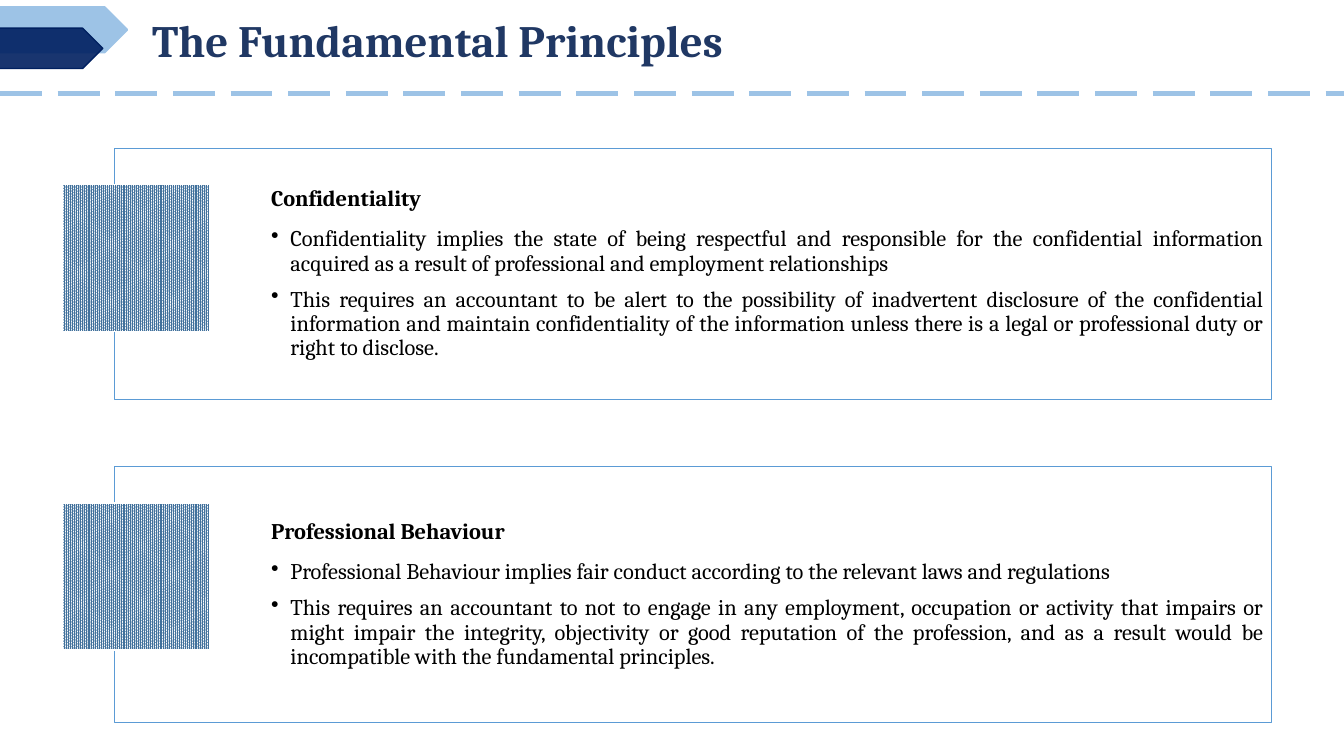
"""Build the slide on two fundamental principles: confidentiality and professional behaviour."""
from dataclasses import dataclass

from lxml import etree
from pptx import Presentation
from pptx.dml.color import RGBColor
from pptx.enum.dml import MSO_LINE, MSO_PATTERN
from pptx.enum.shapes import MSO_CONNECTOR, MSO_SHAPE
from pptx.enum.text import MSO_ANCHOR, PP_ALIGN
from pptx.oxml.ns import qn
from pptx.shapes.autoshape import Shape
from pptx.slide import Slide
from pptx.text.text import _Paragraph
from pptx.util import Inches, Pt

RECTANGLE = MSO_SHAPE.RECTANGLE
PENTAGON = MSO_SHAPE.PENTAGON
STRAIGHT = MSO_CONNECTOR.STRAIGHT
LONG_DASH = MSO_LINE.LONG_DASH
DENSE_DOTS = MSO_PATTERN.PERCENT_90
MIDDLE = MSO_ANCHOR.MIDDLE
JUSTIFY = PP_ALIGN.JUSTIFY

COLORS = {
    "sky": "9DC3E6",
    "navy": "002060",
    "title": "203864",
    "border": "5B9BD5",
    "tile": "41719C",
    "white": "FFFFFF",
    "black": "000000",
}
FONT = "Cambria"
SLIDE_WIDTH, SLIDE_HEIGHT = 13.33, 7.5
PANEL_LEFT, PANEL_WIDTH = 1.13, 11.48
TILE_LEFT, TILE_SIZE = 0.62, 1.46
TILE_DROP = 0.36
BULLET_INDENT = 0.19

TITLE_FONT = {"name": FONT, "size": Pt(32), "bold": True}
HEADING_FONT = {"name": FONT, "size": Pt(16), "bold": True}
POINT_FONT = {**HEADING_FONT, "bold": False}
HEADING_FORMAT = {
    "alignment": JUSTIFY,
    "line_spacing": 0.9,
    "space_before": Pt(6),
    "space_after": Pt(5.6),
}
POINT_FORMAT = {**HEADING_FORMAT, "level": 1, "space_after": Pt(2.4)}
PANEL_FRAME = {
    "word_wrap": True,
    "vertical_anchor": MIDDLE,
    "margin_left": Inches(1.56),
    "margin_top": Inches(0.07),
    "margin_right": Inches(0.07),
    "margin_bottom": Inches(0.07),
}


@dataclass(frozen=True)
class Box:
    left: float
    top: float
    width: float
    height: float


@dataclass(frozen=True)
class Arrow:
    box: Box
    color: str
    line_width: float
    opacity: int


@dataclass(frozen=True)
class Principle:
    top: float
    height: float
    heading: str
    points: tuple[str, ...]


ARROWS = (
    Arrow(Box(-0.03, 0.07, 1.29, 0.45), "sky", 1.5, 100),
    Arrow(Box(-0.03, 0.28, 1.05, 0.4), "navy", 1, 90),
)
PRINCIPLES = (
    Principle(1.47, 2.49, "Confidentiality", (
        "Confidentiality implies the state of being respectful and responsible for the "
        "confidential information acquired as a result of professional and employment "
        "relationships",
        "This requires an accountant to be alert to the possibility of inadvertent disclosure "
        "of the confidential information and maintain confidentiality of the information "
        "unless there is a legal or professional duty or right to disclose.",
    )),
    Principle(4.63, 2.54, "Professional Behaviour", (
        "Professional Behaviour implies fair conduct according to the relevant laws and "
        "regulations",
        "This requires an accountant to not to engage in any employment, occupation or "
        "activity that impairs or might impair the integrity, objectivity or good reputation "
        "of the profession, and as a result would be incompatible with the fundamental "
        "principles.",
    )),
)


def rgb(color: str) -> RGBColor:
    return RGBColor.from_string(COLORS[color])


def apply(target: object, values: dict[str, object]) -> None:
    for attribute, value in values.items():
        setattr(target, attribute, value)


def add_outlined(slide: Slide, kind: MSO_SHAPE, box: Box, line: str, width: float) -> Shape:
    shape = slide.shapes.add_shape(
        kind, Inches(box.left), Inches(box.top), Inches(box.width), Inches(box.height))
    shape.shadow.inherit = False
    shape.line.color.rgb = rgb(line)
    shape.line.width = Pt(width)
    return shape


def fill_solid(shape: Shape, color: str, opacity: int) -> None:
    shape.fill.solid()
    shape.fill.fore_color.rgb = rgb(color)
    if opacity < 100:
        shade = shape.fill._xPr.find(qn("a:solidFill")).find(qn("a:srgbClr"))
        etree.SubElement(shade, qn("a:alpha"), val=str(opacity * 1000))


def write(paragraph: _Paragraph, text: str, font: dict[str, object], color: str) -> None:
    run = paragraph.add_run()
    run.text = text
    apply(run.font, font)
    run.font.color.rgb = rgb(color)


def add_bullet(paragraph: _Paragraph) -> None:
    properties = paragraph._p.get_or_add_pPr()
    properties.set("marL", str(Inches(BULLET_INDENT)))
    properties.set("indent", str(-Inches(BULLET_INDENT)))
    etree.SubElement(properties, qn("a:buChar"), char="•")


def add_arrow(slide: Slide, arrow: Arrow) -> None:
    shape = add_outlined(slide, PENTAGON, arrow.box, arrow.color, arrow.line_width)
    fill_solid(shape, arrow.color, arrow.opacity)


def add_divider(slide: Slide) -> None:
    height = Inches(0.93)
    divider = slide.shapes.add_connector(STRAIGHT, 0, height, Inches(SLIDE_WIDTH), height)
    divider.line.color.rgb = rgb("sky")
    divider.line.width = Pt(3.75)
    divider.line.dash_style = LONG_DASH
    etree.SubElement(divider._element.spPr, qn("a:effectLst"))


def add_title(slide: Slide) -> None:
    title = slide.shapes.add_textbox(Inches(1.41), Inches(0.08), Inches(11.72), Inches(0.64))
    title.text_frame.word_wrap = True
    write(title.text_frame.paragraphs[0], "The Fundamental Principles", TITLE_FONT, "title")


def add_principle(slide: Slide, principle: Principle) -> None:
    panel_box = Box(PANEL_LEFT, principle.top, PANEL_WIDTH, principle.height)
    panel = add_outlined(slide, RECTANGLE, panel_box, "border", 0.5)
    fill_solid(panel, "white", 40)
    frame = panel.text_frame
    apply(frame, PANEL_FRAME)
    heading = frame.paragraphs[0]
    apply(heading, HEADING_FORMAT)
    write(heading, principle.heading, HEADING_FONT, "black")
    for text in principle.points:
        point = frame.add_paragraph()
        apply(point, POINT_FORMAT)
        add_bullet(point)
        write(point, text, POINT_FONT, "black")

    tile_box = Box(TILE_LEFT, principle.top + TILE_DROP, TILE_SIZE, TILE_SIZE)
    tile = add_outlined(slide, RECTANGLE, tile_box, "white", 1)
    tile.fill.patterned()
    tile.fill.pattern = DENSE_DOTS
    tile.fill.fore_color.rgb = rgb("tile")
    tile.fill.back_color.rgb = rgb("white")


def main() -> None:
    presentation = Presentation()
    presentation.slide_width = Inches(SLIDE_WIDTH)
    presentation.slide_height = Inches(SLIDE_HEIGHT)
    slide = presentation.slides.add_slide(presentation.slide_layouts[6])
    back_arrow, front_arrow = ARROWS
    add_arrow(slide, back_arrow)
    add_divider(slide)
    add_arrow(slide, front_arrow)
    add_title(slide)
    for principle in PRINCIPLES:
        add_principle(slide, principle)
    presentation.save("out.pptx")


if __name__ == "__main__":
    main()
